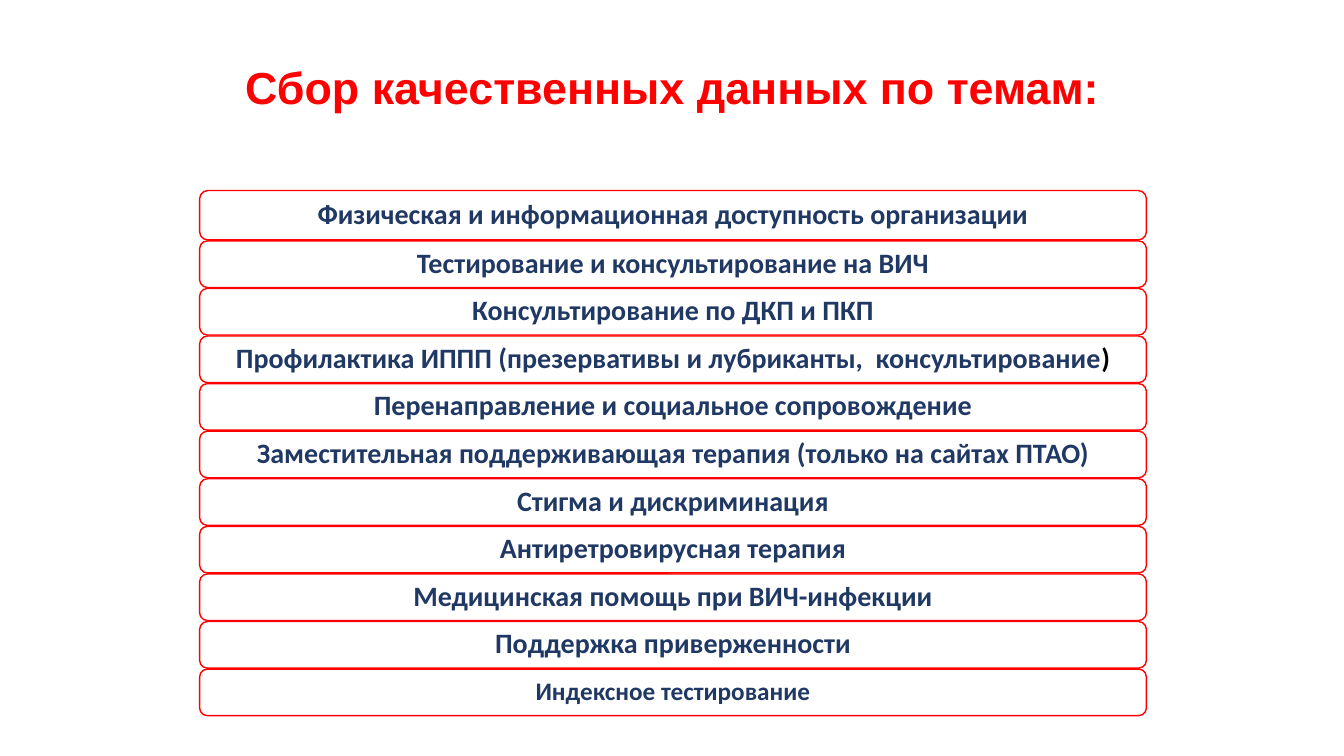
from pptx import Presentation
from pptx.dml.color import RGBColor
from pptx.enum.shapes import MSO_SHAPE
from pptx.enum.text import MSO_ANCHOR, MSO_AUTO_SIZE, PP_ALIGN
from pptx.util import Inches, Pt

ROUNDED = MSO_SHAPE.ROUNDED_RECTANGLE
MIDDLE = MSO_ANCHOR.MIDDLE
CENTER = PP_ALIGN.CENTER
NO_AUTOFIT = MSO_AUTO_SIZE.NONE

RED = RGBColor(0xFF, 0x00, 0x00)
NAVY = RGBColor(0x20, 0x38, 0x64)
BLACK = RGBColor(0x00, 0x00, 0x00)
WHITE = RGBColor(0xFF, 0xFF, 0xFF)

TITLE_ONLY_LAYOUT = 5
FIRST_HEIGHT = 0.49
GAP = 0.01

TOPICS = [
    "Физическая и информационная доступность организации",
    "Тестирование и консультирование на ВИЧ",
    "Консультирование по ДКП и ПКП",
    "Профилактика ИППП (презервативы и лубриканты,  консультирование",
    "Перенаправление и социальное сопровождение",
    "Заместительная поддерживающая терапия (только на сайтах ПТАО)",
    "Стигма и дискриминация",
    "Антиретровирусная терапия",
    "Медицинская помощь при ВИЧ-инфекции",
    "Поддержка приверженности",
    "Индексное тестирование",
]
BLACK_ENDINGS = {3: ")"}
SMALLER_SIZES = {10: 18}


def add_text(paragraph, text, *, size=20, color=NAVY, font="Calibri"):
    """Append a bold run to a centred paragraph."""
    paragraph.alignment = CENTER
    paragraph.line_spacing = 0.9
    run = paragraph.add_run()
    run.text = text
    run.font.name = font
    run.font.size = Pt(size)
    run.font.bold = True
    run.font.color.rgb = color


def fill_title(slide, left, top, width, height):
    title = slide.shapes.title
    title.left, title.top = Inches(left), Inches(top)
    title.width, title.height = Inches(width), Inches(height)
    frame = title.text_frame
    frame.auto_size = NO_AUTOFIT
    frame.vertical_anchor = MIDDLE
    add_text(frame.paragraphs[0], "Сбор качественных данных по темам:",
             size=32, color=RED, font="Arial")


def add_topic_box(slide, left, top, width, height):
    box = slide.shapes.add_shape(ROUNDED, Inches(left), Inches(top),
                                 Inches(width), Inches(height))
    box.shadow.inherit = False
    box.fill.solid()
    box.fill.fore_color.rgb = WHITE
    box.line.color.rgb = RED
    box.line.width = Pt(1)
    frame = box.text_frame
    frame.word_wrap = True
    frame.vertical_anchor = MIDDLE
    frame.margin_left = frame.margin_right = Inches(0.08)
    frame.margin_top = frame.margin_bottom = Inches(0.08)
    return frame.paragraphs[0]


def add_topic_list(slide, left, top, width, height):
    """Stack the topics; the first box is taller, the rest share the space."""
    rest_top = top + FIRST_HEIGHT + GAP
    pitch = (top + height + GAP - rest_top) / (len(TOPICS) - 1)
    for index, topic in enumerate(TOPICS):
        if index == 0:
            box_top, box_height = top, FIRST_HEIGHT
        else:
            box_top, box_height = rest_top + (index - 1) * pitch, pitch - GAP
        paragraph = add_topic_box(slide, left, box_top, width, box_height)
        add_text(paragraph, topic, size=SMALLER_SIZES.get(index, 20))
        if index in BLACK_ENDINGS:
            add_text(paragraph, BLACK_ENDINGS[index], color=BLACK)


def main():
    presentation = Presentation()
    presentation.slide_width = Inches(13.33)
    presentation.slide_height = Inches(7.5)
    layout = presentation.slide_layouts[TITLE_ONLY_LAYOUT]
    slide = presentation.slides.add_slide(layout)
    fill_title(slide, 0.92, 0.4, 11.5, 0.98)
    add_topic_list(slide, 1.98, 1.89, 9.39, 5.21)
    presentation.save("out.pptx")


if __name__ == "__main__":
    main()
